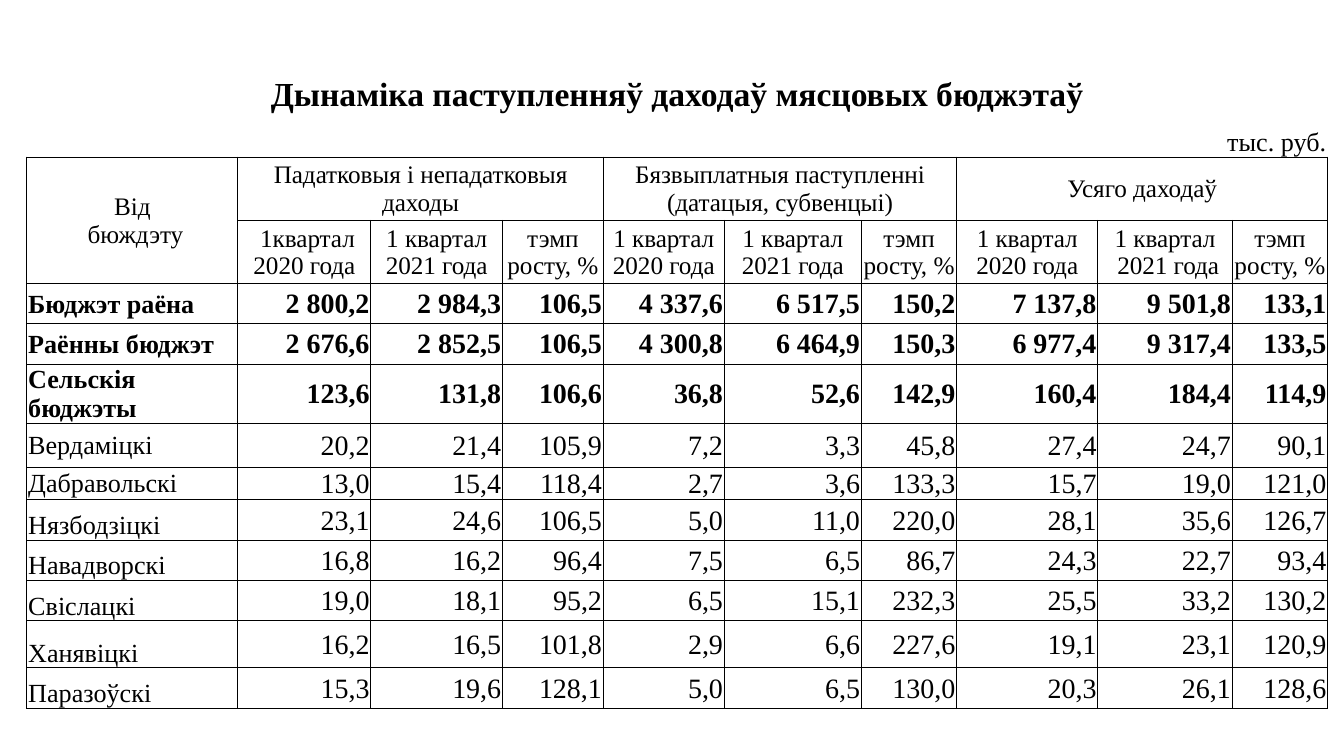
from lxml import etree
from pptx import Presentation
from pptx.dml.color import RGBColor
from pptx.enum.text import MSO_ANCHOR, PP_ALIGN
from pptx.oxml.ns import qn
from pptx.util import Inches, Pt

LEFT, CENTER, RIGHT = PP_ALIGN.LEFT, PP_ALIGN.CENTER, PP_ALIGN.RIGHT
TOP, MIDDLE, BOTTOM = MSO_ANCHOR.TOP, MSO_ANCHOR.MIDDLE, MSO_ANCHOR.BOTTOM
COLORS = {"text": "000000", "border": "000000"}
FONT = "Times New Roman"
PLAIN_STYLE = "{2D5ABB26-0587-4C30-8999-92F81FD0307C}"

COL_WIDTHS = [1.57, 0.99, 0.84, 0.14, 0.75, 0.9, 0.21, 0.81, 0.71, 1.05, 0.85, 0.15, 0.71]
ROW_HEIGHTS = [0.32, 0.32, 0.47, 0.47, 0.3, 0.3, 0.3, 0.33, 0.24, 0.3, 0.3, 0.3, 0.35, 0.3]
HEADER_ROW, FIRST_DATA_ROW = 2, 4
GROUP_COLS = [1, 5, 9]
VALUE_COLS = [col + step for col in GROUP_COLS for step in (0, 1, 3)]
UNIT_SPANS = [(1, 2), (3, 6), (7, 8), (11, 12)]

GROUPS = [
    "Падатковыя і непадатковыя даходы",
    "Бязвыплатныя паступленні (датацыя, субвенцыі)",
    "Усяго даходаў",
]
GROWTH = "тэмп\nросту, %"
SUBHEADS = [
    " 1квартал 2020 года", "1 квартал 2021 года", GROWTH,
    "1 квартал\n2020 года", "1 квартал 2021 года", GROWTH,
    "1 квартал 2020 года", "1 квартал\n 2021 года", GROWTH,
]
BUDGETS = [
    ("Бюджэт раёна", "2 800,2|2 984,3|106,5|4 337,6|6 517,5|150,2|7 137,8|9 501,8|133,1"),
    ("Раённы бюджэт", "2 676,6|2 852,5|106,5|4 300,8|6 464,9|150,3|6 977,4|9 317,4|133,5"),
    ("Сельскія бюджэты", "123,6|131,8|106,6|36,8|52,6|142,9|160,4|184,4|114,9"),
    ("Вердаміцкі", "20,2|21,4|105,9|7,2|3,3|45,8|27,4|24,7|90,1"),
    ("Дабравольскі", "13,0|15,4|118,4|2,7|3,6|133,3|15,7|19,0|121,0"),
    ("Нязбодзіцкі", "23,1|24,6|106,5|5,0|11,0|220,0|28,1|35,6|126,7"),
    ("Навадворскі", "16,8|16,2|96,4|7,5|6,5|86,7|24,3|22,7|93,4"),
    ("Свіслацкі", "19,0|18,1|95,2|6,5|15,1|232,3|25,5|33,2|130,2"),
    ("Ханявіцкі", "16,2|16,5|101,8|2,9|6,6|227,6|19,1|23,1|120,9"),
    ("Паразоўскі", "15,3|19,6|128,1|5,0|6,5|130,0|20,3|26,1|128,6"),
]
TOTAL_COUNT = 3
TOP_ANCHORED = "Дабравольскі"


def set_borders(cell, sides):
    """Draw thin solid lines on the given sides of a cell."""
    tc_pr = cell._tc.get_or_add_tcPr()
    for side in sides:
        ln = etree.SubElement(tc_pr, qn("a:ln" + side), w=str(Pt(0.5)))
        fill = etree.SubElement(ln, qn("a:solidFill"))
        etree.SubElement(fill, qn("a:srgbClr"), val=COLORS["border"])


def write(cell, text, size, align, anchor=MIDDLE, bold=False):
    """Fill a cell with one paragraph per line of text."""
    cell.vertical_anchor = anchor
    tf = cell.text_frame
    for i, line in enumerate(text.split("\n")):
        p = tf.paragraphs[0] if i == 0 else tf.add_paragraph()
        p.alignment = align
        r = p.add_run()
        r.text = line
        r.font.name = FONT
        r.font.size = Pt(size)
        r.font.bold = bold
        r.font.color.rgb = RGBColor.from_string(COLORS["text"])


def merge(table, row, first, last):
    """Join neighbouring cells of one row."""
    table.cell(row, first).merge(table.cell(row, last))


def add_grid(slide):
    """Add the unstyled table with its sizes, margins and borders."""
    frame = slide.shapes.add_table(
        len(ROW_HEIGHTS), len(COL_WIDTHS), Inches(0.2), Inches(0.53),
        Inches(sum(COL_WIDTHS)), Inches(sum(ROW_HEIGHTS)))
    table = frame.table
    table.first_row = table.horz_banding = False
    table._tbl.tblPr.find(qn("a:tableStyleId")).text = PLAIN_STYLE
    for column, width in zip(table.columns, COL_WIDTHS):
        column.width = Inches(width)
    for i, (row, height) in enumerate(zip(table.rows, ROW_HEIGHTS)):
        row.height = Inches(height)
        for cell in row.cells:
            cell.margin_left = cell.margin_right = cell.margin_top = Inches(0.01)
            cell.margin_bottom = 0
            if i >= HEADER_ROW:
                set_borders(cell, "LRTB")
            elif i == HEADER_ROW - 1:
                set_borders(cell, "B")
            cell.fill.background()
    return table


def fill_headers(table):
    """Write the title, the unit and the two header rows."""
    merge(table, 0, 0, len(COL_WIDTHS) - 1)
    write(table.cell(0, 0), "Дынаміка паступленняў даходаў мясцовых бюджэтаў",
          18, CENTER, BOTTOM, True)
    for first, last in UNIT_SPANS:
        merge(table, 1, first, last)
    write(table.cell(1, 11), "тыс. руб.", 14, RIGHT, BOTTOM)
    corner = table.cell(HEADER_ROW, 0)
    corner.merge(table.cell(HEADER_ROW + 1, 0))
    write(corner, "Вiд\n бюждэту", 13.5, CENTER)
    for col, text in zip(GROUP_COLS, GROUPS):
        merge(table, HEADER_ROW, col, col + 3)
        write(table.cell(HEADER_ROW, col), text, 13.5, CENTER)
    for col, text in zip(VALUE_COLS, SUBHEADS):
        write(table.cell(HEADER_ROW + 1, col), text, 13.5, CENTER)


def fill_budgets(table):
    """Write one row of names and values per budget."""
    for i, (name, values) in enumerate(BUDGETS):
        row, bold = FIRST_DATA_ROW + i, i < TOTAL_COUNT
        anchor = TOP if name == TOP_ANCHORED else MIDDLE
        name_anchor = BOTTOM if i > TOTAL_COUNT + 1 else anchor
        write(table.cell(row, 0), name, 14, LEFT, name_anchor, bold)
        for col, value in zip(VALUE_COLS, values.split("|")):
            write(table.cell(row, col), value, 15, RIGHT, anchor, bold)


def main():
    """Build and save the slide."""
    prs = Presentation()
    prs.slide_width = Inches(10)
    prs.slide_height = Inches(10 * 9 / 16)
    slide = prs.slides.add_slide(prs.slide_layouts[6])
    table = add_grid(slide)
    for row in range(HEADER_ROW + 1, len(ROW_HEIGHTS)):
        for col in GROUP_COLS:
            merge(table, row, col + 1, col + 2)
    fill_headers(table)
    fill_budgets(table)
    prs.save("out.pptx")


if __name__ == "__main__":
    main()
